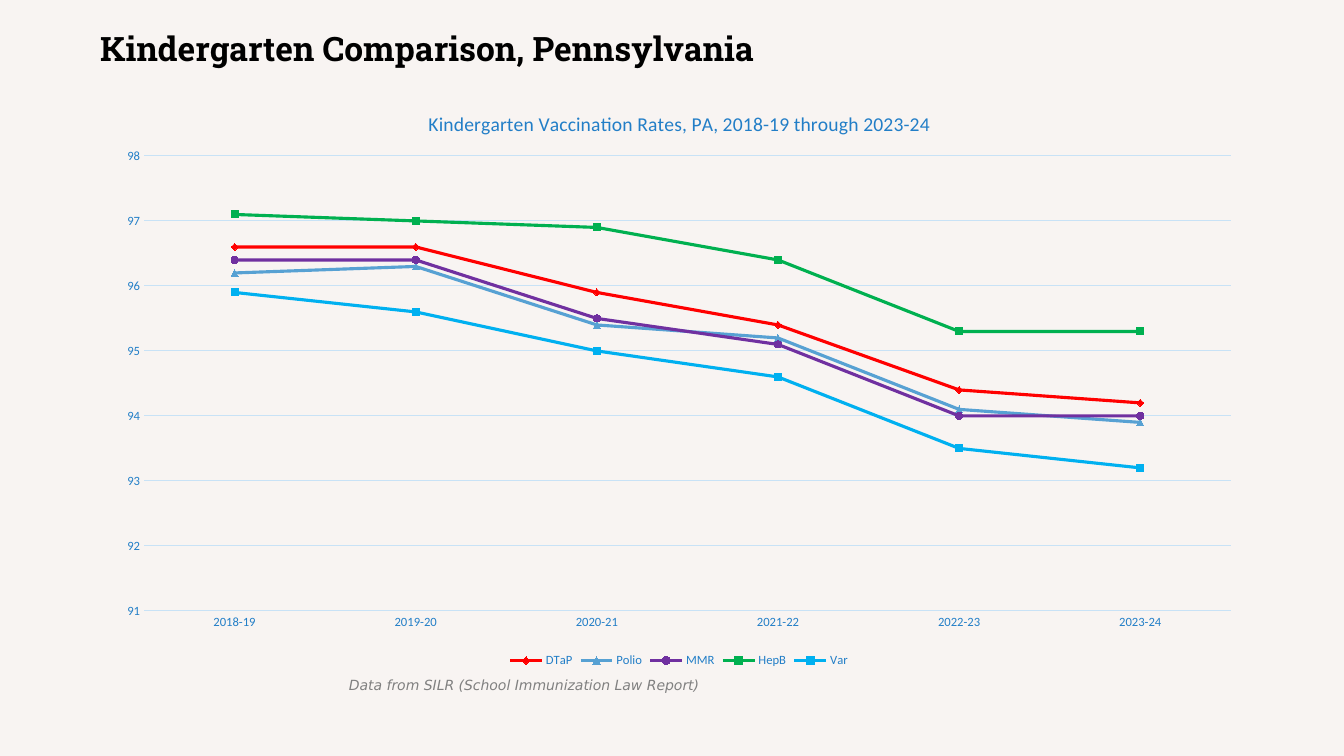
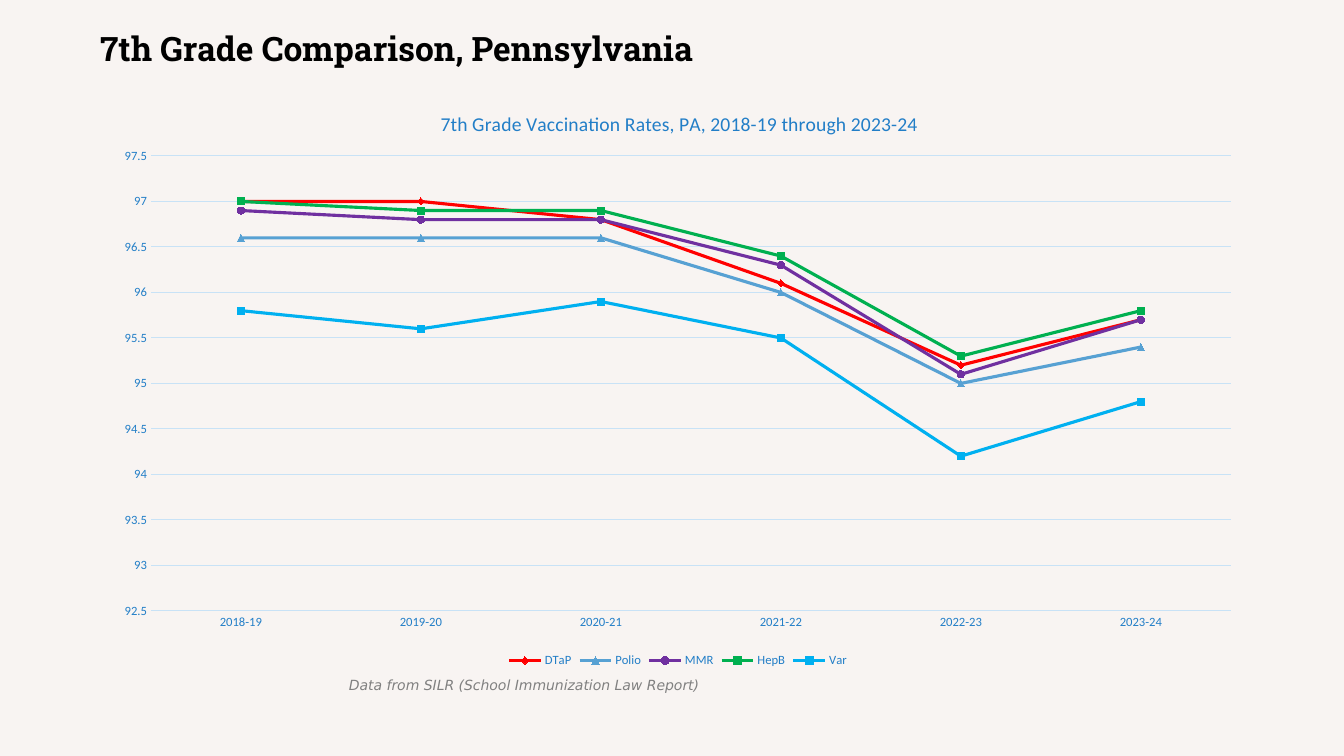
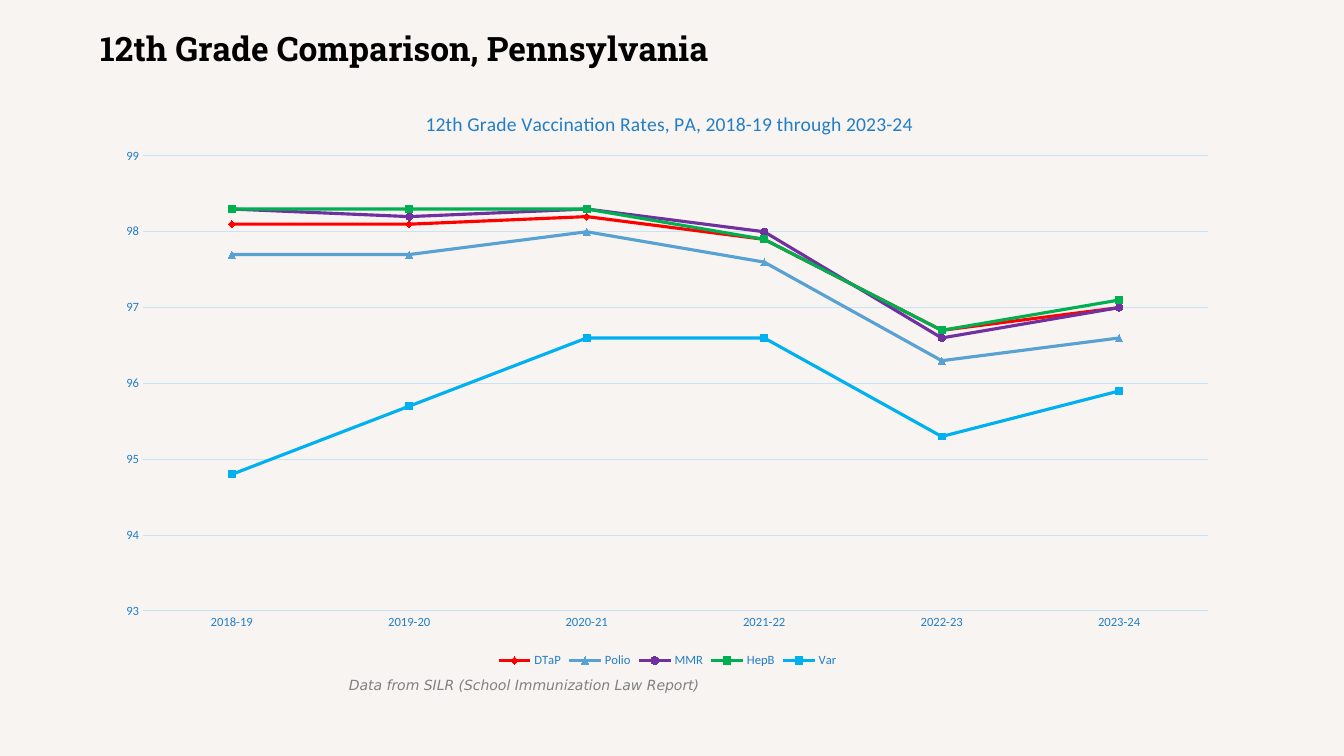
from pptx import Presentation
from pptx import util as u
from pptx.chart.data import CategoryChartData
from pptx.dml.color import RGBColor
from pptx.enum import chart as ch, text
from pptx.oxml import parse_xml
from pptx.oxml.ns import nsdecls, qn

PX = 914400 / 100.8
BACKGROUND = RGBColor(0xF8, 0xF4, 0xF2)
BLACK = RGBColor(0, 0, 0)
GRAY = RGBColor(0x80, 0x80, 0x80)
NAVY = RGBColor(0x0C, 0x2D, 0x47)
LABEL_BLUE = RGBColor(0x22, 0x7E, 0xC7)
GRID_BLUE = RGBColor(0xC8, 0xE2, 0xF6)

YEARS = ["2018-19", "2019-20", "2020-21", "2021-22", "2022-23", "2023-24"]
MARKER = ch.XL_MARKER_STYLE
VACCINES = [
    ("DTaP", RGBColor(0xFF, 0, 0), MARKER.DIAMOND),
    ("Polio", RGBColor(0x57, 0xA1, 0xD3), MARKER.TRIANGLE),
    ("MMR", RGBColor(0x70, 0x30, 0xA0), MARKER.CIRCLE),
    ("HepB", RGBColor(0, 0xB0, 0x50), MARKER.SQUARE),
    ("Var", RGBColor(0, 0xB0, 0xF0), MARKER.SQUARE),
]
CHART_TOP, CHART_HEIGHT = 86, 586
PLOT_TOP, PLOT_HEIGHT, PLOT_RIGHT_MARGIN = 156, 455, 23
HEADING_TOP = 107

# grade, chart left and width, heading left, plot left, axis (low, high, step), rates
GRADES = [
    ("Kindergarten", 104, 1150, 425, 144, (91, 98, 1), [
        (96.6, 96.6, 95.9, 95.4, 94.4, 94.2),
        (96.2, 96.3, 95.4, 95.2, 94.1, 93.9),
        (96.4, 96.4, 95.5, 95.1, 94, 94),
        (97.1, 97, 96.9, 96.4, 95.3, 95.3),
        (95.9, 95.6, 95, 94.6, 93.5, 93.2)]),
    ("7th Grade", 102, 1152, 437, 151, (92.5, 97.5, 0.5), [
        (97, 97, 96.8, 96.1, 95.2, 95.7),
        (96.6, 96.6, 96.6, 96, 95, 95.4),
        (96.9, 96.8, 96.8, 96.3, 95.1, 95.7),
        (97, 96.9, 96.9, 96.4, 95.3, 95.8),
        (95.8, 95.6, 95.9, 95.5, 94.2, 94.8)]),
    ("12th Grade", 104, 1127, 422, 143, (93, 99, 1), [
        (98.1, 98.1, 98.2, 97.9, 96.7, 97),
        (97.7, 97.7, 98, 97.6, 96.3, 96.6),
        (98.3, 98.2, 98.3, 98, 96.6, 97),
        (98.3, 98.3, 98.3, 97.9, 96.7, 97.1),
        (94.8, 95.7, 96.6, 96.6, 95.3, 95.9)]),
]


def set_font(font, name, size, color):
    font.name, font.size = name, u.Pt(size)
    font.color.rgb = color


def set_layout(part, index, inner="", **fractions):
    """Place a chart part by fractions of the chart's width and height."""
    for old in part.findall(qn("c:layout")):
        part.remove(old)
    target = '<c:layoutTarget val="inner"/>' if inner else ""
    modes = '<c:xMode val="edge"/><c:yMode val="edge"/>'
    values = "".join(f'<c:{key} val="{value:.4f}"/>' for key, value in fractions.items())
    part.insert(index, parse_xml(
        f'<c:layout {nsdecls("c")}><c:manualLayout>{target}{modes}{values}'
        '</c:manualLayout></c:layout>'))


deck = Presentation()
deck.slide_width, deck.slide_height = round(1344 * PX), round(756 * PX)
master_fill = deck.slide_master.background.fill
master_fill.solid()
master_fill.fore_color.rgb = BACKGROUND
title_only = deck.slide_layouts[5]

for grade, left, width, heading_left, plot_left, (low, high, step), rates in GRADES:
    slide = deck.slides.add_slide(title_only)

    title = slide.shapes.title
    title.left, title.top, title.width, title.height = (round(n * PX) for n in (90, 23, 1165, 62))
    title.text_frame.text = f"{grade} Comparison, Pennsylvania"
    title.text_frame.vertical_anchor = text.MSO_ANCHOR.TOP
    title.text_frame.auto_size = text.MSO_AUTO_SIZE.NONE
    title_line = title.text_frame.paragraphs[0]
    title_line.alignment = text.PP_ALIGN.LEFT
    set_font(title_line.font, "Roboto Slab", 24, BLACK)
    title_line.font.bold = True

    credit = slide.shapes.add_textbox(*(round(n * PX) for n in (339, 672, 411, 27))).text_frame
    credit.word_wrap = True
    credit.auto_size = text.MSO_AUTO_SIZE.SHAPE_TO_FIT_TEXT
    credit.text = "Data from SILR (School Immunization Law Report)"
    set_font(credit.paragraphs[0].font, "DejaVu Sans", 10, GRAY)
    credit.paragraphs[0].font.italic = True

    data = CategoryChartData()
    data.categories = YEARS
    for (vaccine, _, _), values in zip(VACCINES, rates):
        data.add_series(vaccine, values)
    chart = slide.shapes.add_chart(
        ch.XL_CHART_TYPE.LINE_MARKERS,
        *(round(n * PX) for n in (left, CHART_TOP, width, CHART_HEIGHT)), data).chart
    set_font(chart.font, "Calibri", 10, NAVY)

    chart.has_title = True
    heading = chart.chart_title.text_frame
    heading.text = f"{grade} Vaccination Rates, PA, 2018-19 through 2023-24"
    set_font(heading.paragraphs[0].font, "Calibri", 14, LABEL_BLUE)
    heading.paragraphs[0].font.bold = False
    set_layout(chart.chart_title.element, 1,
               x=(heading_left - left) / width, y=(HEADING_TOP - CHART_TOP) / CHART_HEIGHT)
    set_layout(chart.element.find(".//" + qn("c:plotArea")), 0, inner=True,
               x=(plot_left - left) / width, y=(PLOT_TOP - CHART_TOP) / CHART_HEIGHT,
               w=(left + width - PLOT_RIGHT_MARGIN - plot_left) / width,
               h=PLOT_HEIGHT / CHART_HEIGHT)

    chart.has_legend = True
    chart.legend.position = ch.XL_LEGEND_POSITION.BOTTOM
    chart.legend.include_in_layout = False
    set_font(chart.legend.font, "Calibri", 9, LABEL_BLUE)

    years, percent = chart.category_axis, chart.value_axis
    for axis in (years, percent):
        axis.major_tick_mark = axis.minor_tick_mark = ch.XL_TICK_MARK.NONE
        set_font(axis.tick_labels.font, "Calibri", 9, LABEL_BLUE)
    percent.minimum_scale, percent.maximum_scale, percent.major_unit = low, high, step
    percent.tick_labels.number_format = "General"
    percent.tick_labels.number_format_is_linked = False
    percent.format.line.fill.background()
    for line in (years.format.line, percent.major_gridlines.format.line):
        line.color.rgb = GRID_BLUE
        line.width = u.Pt(0.75)

    plot = chart.plots[0]
    plot.vary_by_categories = False
    for series, (_, color, style) in zip(plot.series, VACCINES):
        series.smooth = False
        series.format.line.color.rgb = color
        series.format.line.width = u.Pt(2.25)
        series.marker.style, series.marker.size = style, 5
        series.marker.format.fill.solid()
        series.marker.format.fill.fore_color.rgb = color
        series.marker.format.line.color.rgb = color

deck.save("out.pptx")
